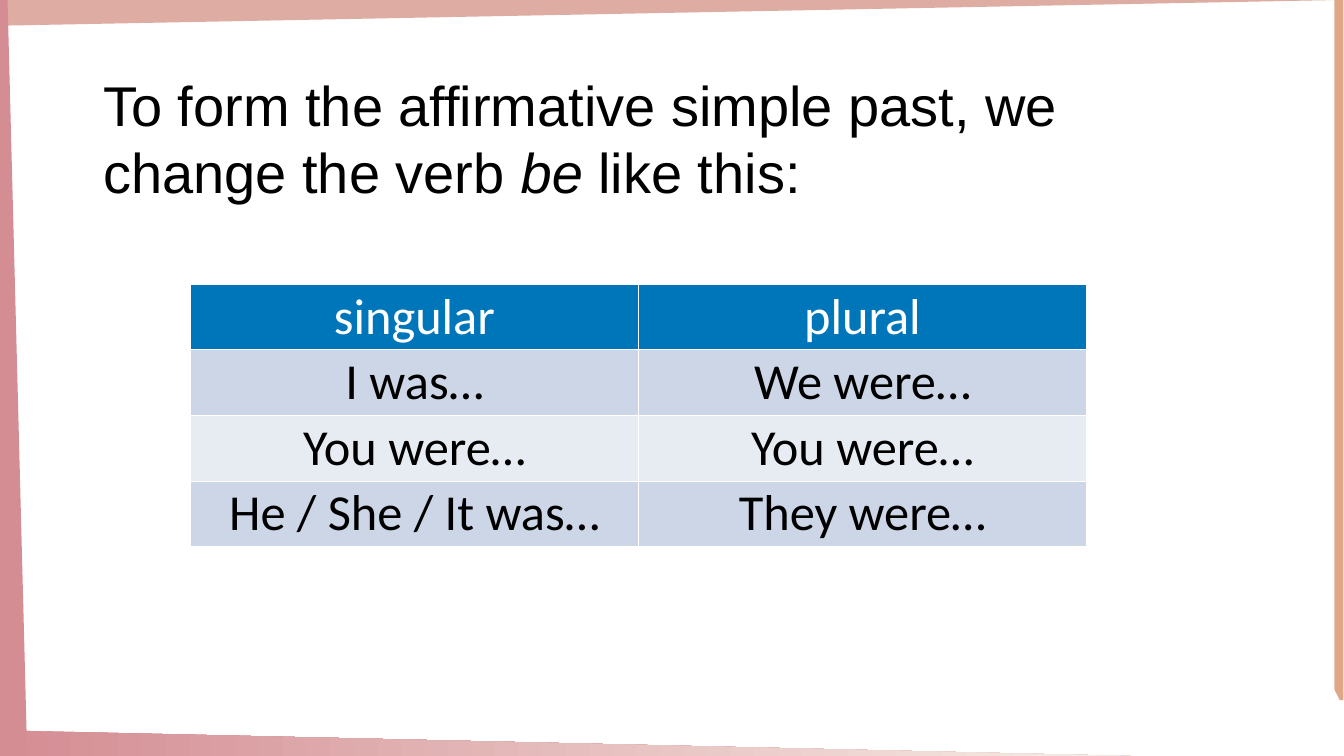
from lxml import etree
from pptx import Presentation
from pptx import util as u
from pptx.dml.color import RGBColor
from pptx.enum import shapes, text
from pptx.oxml.ns import qn

W, H = 26.67, 15

BLACK = RGBColor(0x00, 0x00, 0x00)
WHITE = RGBColor(0xFF, 0xFF, 0xFF)
BLUE = RGBColor(0x00, 0x76, 0xBA)
BANDS = [RGBColor(0xCC, 0xD6, 0xE7), RGBColor(0xE7, 0xEC, 0xF3)]
ROSE = RGBColor(0xD4, 0x8D, 0x93)
BLUSH = RGBColor(0xDE, 0xAC, 0xA2)
CREAM = RGBColor(0xF7, 0xED, 0xE6)
PEACH = RGBColor(0xDF, 0xA6, 0x87)

TITLE = [
    ("To form the affirmative simple past, we change the verb ", False),
    ("be", True),
    (" like this:", False),
]
VERB_FORMS = [
    ("singular", "plural"),
    ("I was…", "We were…"),
    ("You were…", "You were…"),
    ("He / She / It was…", "They were…"),
]

RIGHT_BAR = (26.48, 0, 0.18, 13.89)
# Other frame pieces from back to front: outline points in inches, fill colours
# (two colours make a left-to-right gradient)
FRAME = [
    ([(0, 0), (0, 0.51), (26.56, 0)], [BLUSH]),
    ([(0, H), (0, H - 0.51), (22.45, H)], [ROSE, CREAM]),
    ([(0, 0), (0, H), (0.54, H), (0.15, 0)], [ROSE]),
    ([(21.3, 12.97), (22.52, 12.97), (23.12, 11.94), (24.29, 11.94),
      (24.9, 13), (26.11, 12.97), (26.65, 14.02), (26.3, 14.68),
      (22.3, 14.68), (21.9, 13.99)], [WHITE]),
]


def add_run(p, words, font, size, color, italic=None):
    r = p.add_run()
    r.text = words
    r.font.name, r.font.size, r.font.italic = font, u.Pt(size), italic
    r.font.color.rgb = color


def paint(sp, colors):
    sp.shadow.inherit = False
    sp.line.fill.background()
    if len(colors) == 1:
        sp.fill.solid()
        sp.fill.fore_color.rgb = colors[0]
    else:
        sp.fill.gradient()
        sp.fill.gradient_angle = 0
        for stop, color in zip(sp.fill.gradient_stops, colors):
            stop.color.rgb = color


def add_frame(s):
    bar = s.shapes.add_shape(shapes.MSO_SHAPE.RECTANGLE, *map(u.Inches, RIGHT_BAR))
    paint(bar, [PEACH])
    for points, colors in FRAME:
        # The builder keeps whole units only, so draw in hundredths of an inch
        start, *rest = [(x * 100, y * 100) for x, y in points]
        builder = s.shapes.build_freeform(*start, scale=u.Inches(0.01))
        builder.add_line_segments(rest, close=True)
        paint(builder.convert_to_shape(), colors)


def add_title(s):
    sp = s.shapes.title
    sp.left, sp.top, sp.width, sp.height = map(u.Inches, (1.95, 1.34, 21.45, 2.79))
    tf = sp.text_frame
    tf.word_wrap = True
    tf.auto_size = text.MSO_AUTO_SIZE.NONE
    tf.vertical_anchor = text.MSO_ANCHOR.MIDDLE
    p = tf.paragraphs[0]
    p.alignment = text.PP_ALIGN.LEFT
    for words, italic in TITLE:
        add_run(p, words, "Arial", 80, BLACK, italic)


def set_borders(cell, color, width):
    tcPr = cell._tc.get_or_add_tcPr()
    for i, side in enumerate(("lnL", "lnR", "lnT", "lnB")):
        ln = etree.Element(qn(f"a:{side}"), w=str(u.Pt(width)))
        fill = etree.SubElement(ln, qn("a:solidFill"))
        etree.SubElement(fill, qn("a:srgbClr"), val=str(color))
        tcPr.insert(i, ln)


def add_verb_table(s):
    rows, cols = len(VERB_FORMS), len(VERB_FORMS[0])
    table = s.shapes.add_table(rows, cols, u.Inches(3.78), u.Inches(5.64),
                               u.Inches(17.78), u.Inches(5.2)).table
    for i, forms in enumerate(VERB_FORMS):
        for j, words in enumerate(forms):
            cell = table.cell(i, j)
            cell.margin_top = cell.margin_bottom = u.Inches(0.04)
            cell.fill.solid()
            cell.fill.fore_color.rgb = BANDS[(i - 1) % 2] if i else BLUE
            set_borders(cell, WHITE, 1)
            p = cell.text_frame.paragraphs[0]
            p.alignment = text.PP_ALIGN.CENTER
            add_run(p, words, "Calibri", 72, BLACK if i else WHITE, False)
            p.runs[0].font.bold = False


def main():
    prs = Presentation()
    prs.slide_width, prs.slide_height = u.Inches(W), u.Inches(H)
    s = prs.slides.add_slide(prs.slide_layouts[5])
    s.background.fill.solid()
    s.background.fill.fore_color.rgb = WHITE
    add_frame(s)
    add_title(s)
    add_verb_table(s)
    prs.save("out.pptx")


if __name__ == "__main__":
    main()
